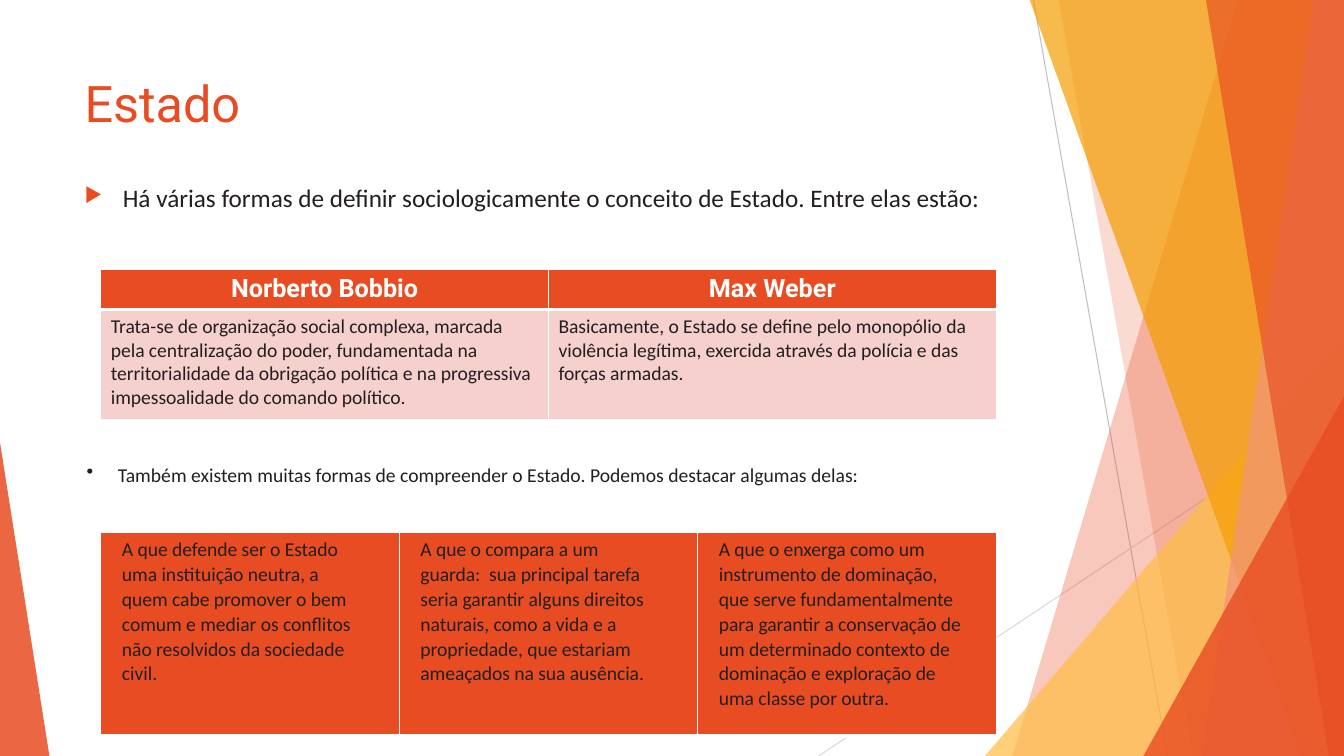
from lxml import etree
from pptx import Presentation
from pptx import util as u
from pptx.dml.color import RGBColor
from pptx.enum import shapes, text
from pptx.oxml.ns import qn

ORANGE = RGBColor(0xE8, 0x4C, 0x22)
AMBER = RGBColor(0xF4, 0x9D, 0x00)
YELLOW = RGBColor(0xFF, 0xBD, 0x47)
SALMON = RGBColor(0xF1, 0x94, 0x7A)
PINK = RGBColor(0xF6, 0xD0, 0xCD)
INK = RGBColor(0x23, 0x1F, 0x20)
WHITE = RGBColor(0xFF, 0xFF, 0xFF)
GREY = RGBColor(0xBF, 0xBF, 0xBF)
LIGHT_GREY = RGBColor(0xD9, 0xD9, 0xD9)
HEADING_FONT, BODY_FONT = "Roboto", "Calibri"
WIDTH, HEIGHT, BLEED = 13.33, 7.5, -0.01


def inches(*lengths):
    return [u.Inches(length) for length in lengths]


def child(parent, tag, **attributes):
    return etree.SubElement(parent, qn(tag), {k: str(v) for k, v in attributes.items()})


def write(frame, wording, size=14, font=BODY_FONT, color=INK, bold=False,
          align=text.PP_ALIGN.LEFT, line_spacing=None, indent=0, hanging=0,
          tracking=0, bullet=None, bullet_color=None, bullet_percent=100):
    """Fill the frame's first paragraph; indents in inches, tracking in 1/100 pt."""
    frame.word_wrap = True
    paragraph = frame.paragraphs[0]
    properties = paragraph._p.get_or_add_pPr()
    properties.set("marL", str(u.Inches(indent)))
    properties.set("indent", str(-u.Inches(hanging)))
    if bullet:
        if bullet_color is not None:
            child(child(properties, "a:buClr"), "a:srgbClr", val=bullet_color)
        child(properties, "a:buSzPct", val=bullet_percent * 1000)
        child(properties, "a:buChar", char=bullet)
    paragraph.alignment = align
    if line_spacing:
        paragraph.line_spacing = line_spacing
    run = paragraph.add_run()
    run.text = wording
    run.font.size, run.font.name, run.font.bold = u.Pt(size), font, bold
    run.font.color.rgb = color
    if tracking:
        run._r.get_or_add_rPr().set("spc", str(tracking))


def paint_cell(cell, fill, top=1, bottom=1):
    """Set the fill and the white borders; top and bottom are widths in points."""
    properties = cell._tc.get_or_add_tcPr()
    for side, width in (("L", 1), ("R", 1), ("T", top), ("B", bottom)):
        border = child(properties, f"a:ln{side}", w=u.Pt(width))
        child(child(border, "a:solidFill"), "a:srgbClr", val=WHITE)
    cell.fill.solid()
    cell.fill.fore_color.rgb = fill


class SlideBuilder:
    def __init__(self, slide):
        self.shapes = slide.shapes

    def line(self, start, end, color):
        connector = self.shapes.add_connector(
            shapes.MSO_CONNECTOR.STRAIGHT, *inches(*start, *end))
        connector.line.color.rgb = color
        connector.line.width = u.Pt(0.75)
        child(connector._element.spPr, "a:effectLst")

    def paint(self, facet, color, opacity):
        facet.shadow.inherit = False
        facet.line.fill.background()
        facet.fill.solid()
        facet.fill.fore_color.rgb = color
        srgb = facet._element.spPr.find(".//" + qn("a:srgbClr"))
        child(srgb, "a:alpha", val=opacity * 1000)

    def band(self, top_left, bottom_left, color, opacity):
        """Full-height facet that reaches the right edge of the slide."""
        outline = self.shapes.build_freeform(*inches(top_left, BLEED))
        corners = [(WIDTH, BLEED), (WIDTH, HEIGHT), (bottom_left, HEIGHT)]
        outline.add_line_segments([inches(*corner) for corner in corners], close=True)
        self.paint(outline.convert_to_shape(), color, opacity)

    def corner(self, left, top, width, apex, color, opacity):
        """Right triangle that stands on the bottom edge of the slide."""
        triangle = self.shapes.add_shape(shapes.MSO_SHAPE.ISOSCELES_TRIANGLE,
                                         *inches(left, top, width, HEIGHT - top))
        triangle.adjustments[0] = apex
        self.paint(triangle, color, opacity)

    def text(self, wording, left, top, width, height, **style):
        box = self.shapes.add_textbox(*inches(left, top, width, height))
        write(box.text_frame, wording, **style)

    def table(self, left, top, width, row_heights, columns, header=False):
        frame = self.shapes.add_table(
            len(row_heights), columns, *inches(left, top, width, sum(row_heights)))
        table = frame.table
        table.first_row, table.horz_banding = header, False
        for row, height in zip(table.rows, row_heights):
            row.height = u.Inches(height)
        return table


def main():
    deck = Presentation()
    deck.slide_width, deck.slide_height = inches(WIDTH, HEIGHT)
    page = SlideBuilder(deck.slides.add_slide(deck.slide_layouts[6]))

    page.line((10.25, 0), (11.58, HEIGHT), GREY)
    page.line((WIDTH, 4.03), (8.12, HEIGHT), LIGHT_GREY)
    page.band(12.28, 10.04, ORANGE, 30)
    page.band(10.5, 11.83, ORANGE, 20)
    page.corner(9.77, 3.33, 3.56, 1, YELLOW, 72)
    page.band(10.21, 12.91, AMBER, 70)
    page.band(13.03, 11.92, SALMON, 70)
    page.band(11.96, 13.18, ORANGE, 65)
    page.corner(11.34, 3.93, 1.99, 1, ORANGE, 80)
    page.corner(0, 4.39, 0.49, 0, ORANGE, 85)

    page.text("Estado", 0.74, 0.67, 9.4, 1.44, size=36, font=HEADING_FONT, color=ORANGE)
    page.text("Há várias formas de definir sociologicamente o conceito de Estado. "
              "Entre elas estão:", 0.74, 1.76, 9.4, 0.5, size=18, indent=0.38,
              hanging=0.38, bullet="▶", bullet_color=ORANGE, bullet_percent=80)

    definitions = {
        "Norberto Bobbio":
            "Trata-se de organização social complexa, marcada pela centralização do "
            "poder, fundamentada na territorialidade da obrigação política e na "
            "progressiva impessoalidade do comando político.",
        "Max Weber":
            "Basicamente, o Estado se define pelo monopólio da violência legítima, "
            "exercida através da polícia e das forças armadas.",
    }
    authors = page.table(1, 2.67, 8.88, (0.39, 1.09), len(definitions), header=True)
    for column, (author, definition) in enumerate(definitions.items()):
        heading, body = authors.cell(0, column), authors.cell(1, column)
        paint_cell(heading, ORANGE, bottom=3)
        paint_cell(body, PINK, top=3)
        write(heading.text_frame, author, size=18, font=HEADING_FONT, color=WHITE,
              bold=True, align=text.PP_ALIGN.CENTER)
        write(body.text_frame, definition, tracking=-5)

    page.text("Também existem muitas formas de compreender o Estado. "
              "Podemos destacar algumas delas:", 0.74, 4.54, 8.89, 0.35,
              indent=0.33, hanging=0.31, bullet="•")

    # Each view with the right margin of its cell
    views = [
        ("A que defende ser o Estado uma instituição neutra, a quem cabe promover o "
         "bem comum e mediar os conflitos não resolvidos da sociedade civil.", 0.48),
        ("A que o compara a um guarda:  sua principal tarefa seria garantir alguns "
         "direitos naturais, como a vida e a propriedade, que estariam ameaçados na "
         "sua ausência.", 0.45),
        ("A que o enxerga como um instrumento de dominação, que serve "
         "fundamentalmente para garantir a conservação de um determinado contexto de "
         "dominação e exploração de uma classe por outra.", 0.3),
    ]
    conceptions = page.table(1, 5.28, 8.88, (2.02,), len(views))
    for column, (view, margin) in enumerate(views):
        cell = conceptions.cell(0, column)
        paint_cell(cell, ORANGE, bottom=3)
        cell.margin_right = u.Inches(margin)
        write(cell.text_frame, view, indent=0.11, line_spacing=1.04, tracking=-5)

    deck.save("out.pptx")


if __name__ == "__main__":
    main()
